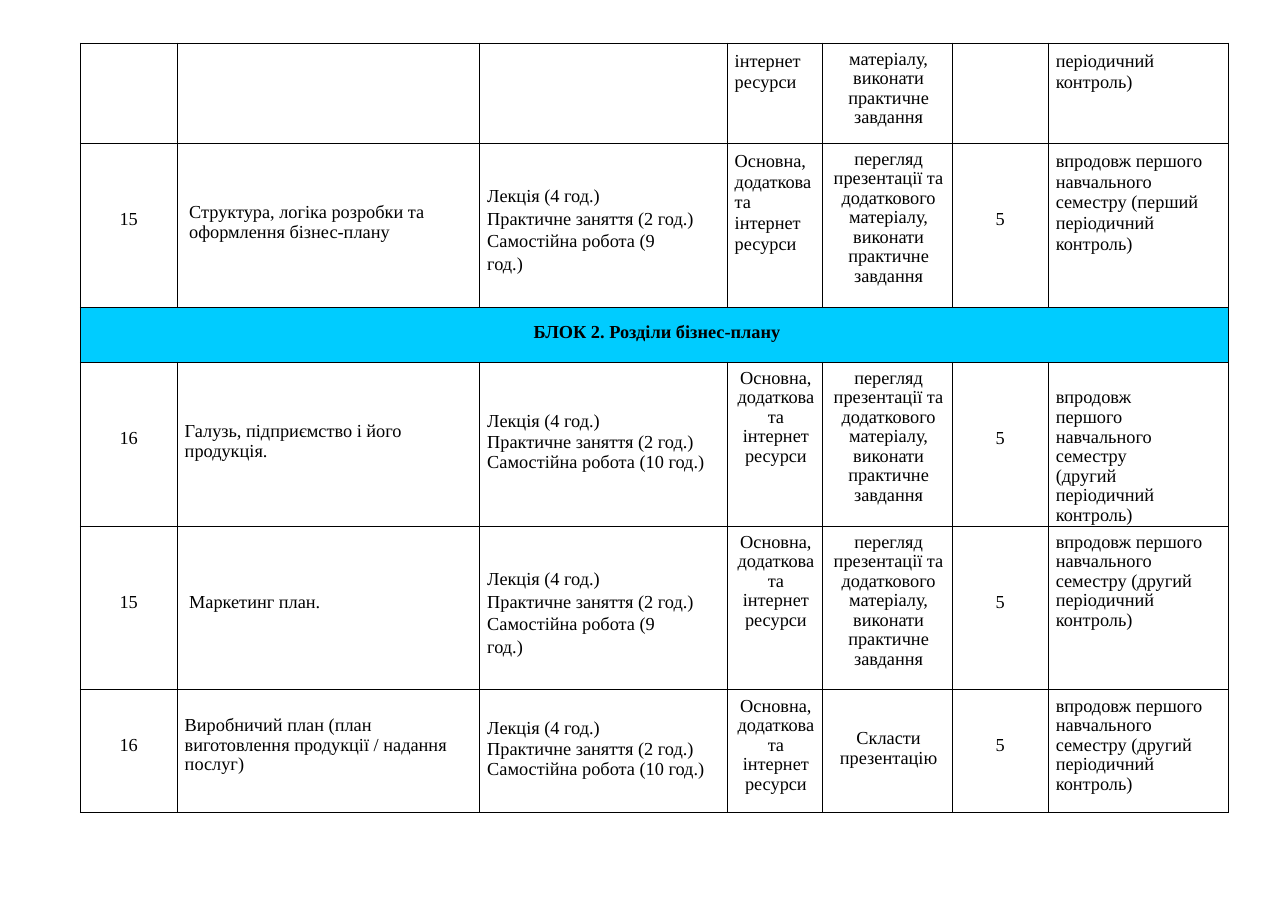
"""Build the course plan slide: a table of topics, class hours, resources, tasks and control."""
import collections

import lxml.etree
import pptx
import pptx.dml.color
import pptx.enum.text
import pptx.oxml.ns
import pptx.util

SLIDE_SIZE = (11.71, 8.28)
TABLE_CORNER = (0.73, 0.39)
COLUMN_WIDTHS = [0.88, 2.75, 2.25, 0.87, 1.18, 0.87, 1.64]
ROW_HEIGHTS = [0.91, 1.49, 0.5, 1.49, 1.49, 1.11]

THEME = {
    "font": "Times New Roman",
    "size": 12,
    "ink": "000000",
    "band": "00CCFF",
    "border": 0.5,
}

Style = collections.namedtuple("Style", "align anchor left top bottom spacing")
STYLES = {
    "number": Style("CENTER", "MIDDLE", 0, 0, 0.1, 1.0),
    "band": Style("CENTER", "MIDDLE", 0.05, 0, 0.04, 1.0),
    "topic": Style("LEFT", "MIDDLE", 0.07, 0, 0.05, 1.0),
    "topic_inset": Style("LEFT", "MIDDLE", 0.11, 0, 0.05, 1.0),
    "topic_line": Style("LEFT", "MIDDLE", 0.11, 0, 0.1, 1.0),
    "topic_tight": Style("LEFT", "MIDDLE", 0.07, 0, 0.1, 0.95),
    "hours": Style("LEFT", "MIDDLE", 0.07, 0, 0.04, 1.02),
    "hours_long": Style("LEFT", "MIDDLE", 0.07, 0.08, 0, 1.1),
    "loose": Style("LEFT", "TOP", 0.07, 0.07, 0, 1.02),
    "tight": Style("LEFT", "TOP", 0.07, 0.06, 0, 0.96),
    "tight_low": Style("LEFT", "TOP", 0.07, 0.24, 0, 0.96),
    "centred": Style("CENTER", "TOP", 0.02, 0.06, 0, 0.96),
    "centred_middle": Style("CENTER", "MIDDLE", 0.02, 0, 0.04, 1.0),
}

EMPTY = ("", "number")
POINTS = ("5", "number")
RESOURCES = "Основна,\nдодаткова\nта\nінтернет\nресурси"
REVIEW = (
    "перегляд\nпрезентації та\nдодаткового\nматеріалу,\nвиконати\nпрактичне\nзавдання",
    "centred",
)
LECTURE = "Лекція (4 год.)\n\nПрактичне заняття (2 год.)\nСамостійна робота "
HOURS_NINE = (LECTURE + "(9\nгод.)", "hours_long")
HOURS_TEN = (LECTURE + "(10 год.)", "hours")
SECOND_CONTROL = (
    "впродовж першого\nнавчального\nсеместру (другий\nперіодичний\nконтроль)",
    "tight",
)

ROWS = [
    [
        EMPTY, EMPTY, EMPTY,
        ("інтернет\nресурси", "loose"),
        ("матеріалу,\nвиконати\nпрактичне\nзавдання", "centred"),
        EMPTY,
        ("періодичний\nконтроль)", "loose"),
    ],
    [
        ("15", "number"),
        ("Структура, логіка розробки та\nоформлення бізнес-плану", "topic_inset"),
        HOURS_NINE, (RESOURCES, "loose"), REVIEW, POINTS,
        ("впродовж першого\nнавчального\nсеместру (перший\nперіодичний\nконтроль)", "loose"),
    ],
    [("БЛОК 2. Розділи бізнес-плану", "band")],
    [
        ("16", "number"),
        ("Галузь, підприємство і його\nпродукція.", "topic"),
        HOURS_TEN, (RESOURCES, "centred"), REVIEW, POINTS,
        ("впродовж\nпершого\nнавчального\nсеместру\n(другий\nперіодичний\nконтроль)", "tight_low"),
    ],
    [
        ("15", "number"),
        ("Маркетинг план.", "topic_line"),
        HOURS_NINE, (RESOURCES, "centred"), REVIEW, POINTS, SECOND_CONTROL,
    ],
    [
        ("16", "number"),
        ("Виробничий план (план\nвиготовлення продукції / надання\nпослуг)", "topic_tight"),
        HOURS_TEN, (RESOURCES, "centred"),
        ("Скласти\nпрезентацію", "centred_middle"),
        POINTS, SECOND_CONTROL,
    ],
]


def color(name):
    return pptx.dml.color.RGBColor.from_string(THEME[name])


def draw_borders(cell):
    properties = cell._tc.get_or_add_tcPr()
    qualified = pptx.oxml.ns.qn
    for position, side in enumerate(("a:lnL", "a:lnR", "a:lnT", "a:lnB")):
        line = lxml.etree.Element(qualified(side), w=str(pptx.util.Pt(THEME["border"])))
        fill = lxml.etree.SubElement(line, qualified("a:solidFill"))
        lxml.etree.SubElement(fill, qualified("a:srgbClr"), val=THEME["ink"])
        properties.insert(position, line)


def write_text(cell, text, style, bold):
    cell.margin_left, cell.margin_right = pptx.util.Inches(style.left), 0
    cell.margin_top = pptx.util.Inches(style.top)
    cell.margin_bottom = pptx.util.Inches(style.bottom)
    cell.vertical_anchor = pptx.enum.text.MSO_ANCHOR[style.anchor]
    frame = cell.text_frame
    for index, block in enumerate(text.split("\n\n")):
        paragraph = frame.add_paragraph() if index else frame.paragraphs[0]
        paragraph.alignment = pptx.enum.text.PP_ALIGN[style.align]
        paragraph.line_spacing = style.spacing
        for number, words in enumerate(block.split("\n") if block else []):
            if number:
                paragraph.add_line_break()
            run = paragraph.add_run()
            run.text = words
            run.font.name = THEME["font"]
            run.font.size = pptx.util.Pt(THEME["size"])
            run.font.bold = bold
            run.font.color.rgb = color("ink")


def build_table(slide):
    lengths = (*TABLE_CORNER, sum(COLUMN_WIDTHS), sum(ROW_HEIGHTS))
    table = slide.shapes.add_table(
        len(ROW_HEIGHTS), len(COLUMN_WIDTHS), *map(pptx.util.Inches, lengths)
    ).table
    table.first_row = table.horz_banding = False
    for column, width in zip(table.columns, COLUMN_WIDTHS):
        column.width = pptx.util.Inches(width)
    for row, height in zip(table.rows, ROW_HEIGHTS):
        row.height = pptx.util.Inches(height)
    for row, content in zip(table.rows, ROWS):
        is_band = len(content) == 1
        cells = list(row.cells)
        if is_band:
            cells[0].merge(cells[-1])
        for cell in cells:
            if is_band:
                cell.fill.solid()
                cell.fill.fore_color.rgb = color("band")
            else:
                cell.fill.background()
            draw_borders(cell)
        for cell, (text, style) in zip(cells, content):
            write_text(cell, text, STYLES[style], is_band)


def main():
    presentation = pptx.Presentation()
    presentation.slide_width, presentation.slide_height = map(pptx.util.Inches, SLIDE_SIZE)
    slide = presentation.slides.add_slide(presentation.slide_layouts[6])
    build_table(slide)
    presentation.save("out.pptx")


if __name__ == "__main__":
    main()
